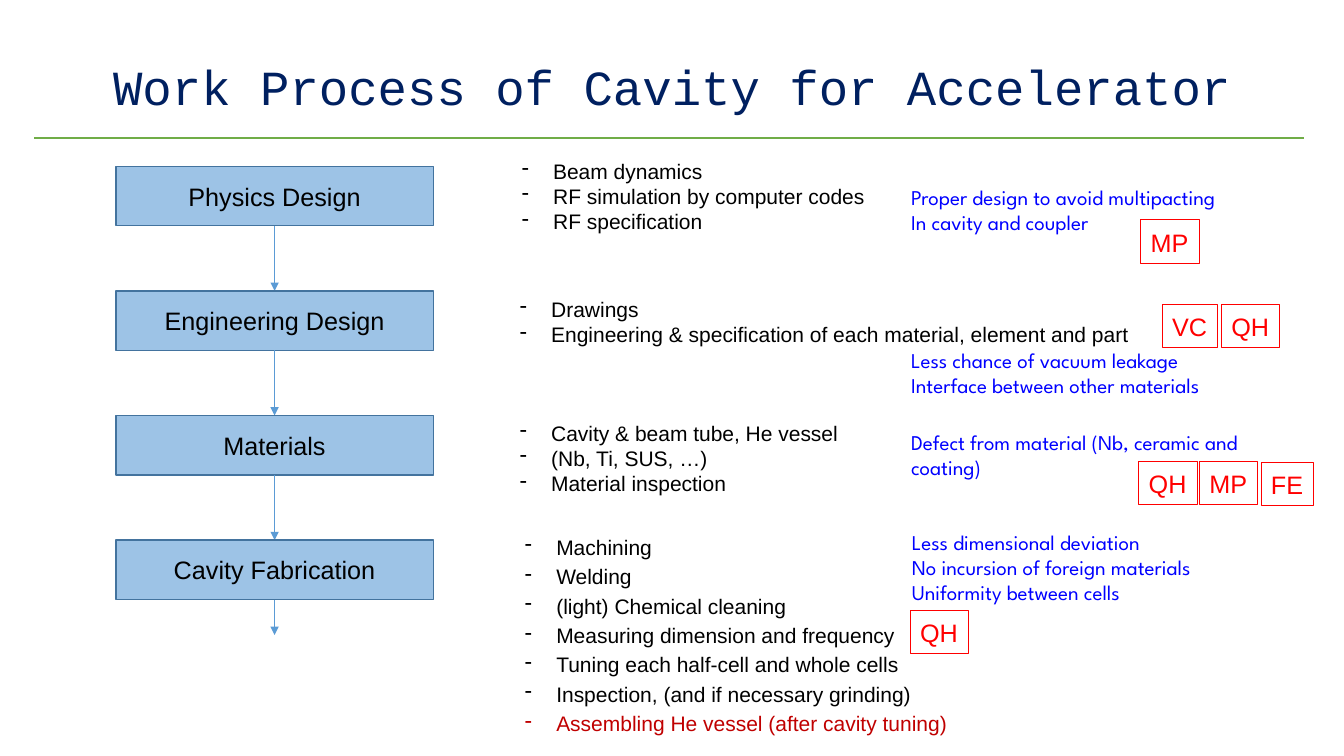
from lxml import etree
from pptx import Presentation
from pptx.dml.color import RGBColor
from pptx.enum.shapes import MSO_CONNECTOR, MSO_SHAPE
from pptx.enum.text import MSO_ANCHOR, MSO_AUTO_SIZE, PP_ALIGN
from pptx.oxml.ns import qn
from pptx.util import Cm, Pt

RECT = MSO_SHAPE.RECTANGLE
STRAIGHT = MSO_CONNECTOR.STRAIGHT
MIDDLE = MSO_ANCHOR.MIDDLE
GROW = MSO_AUTO_SIZE.SHAPE_TO_FIT_TEXT
LEFT, CENTER, JUSTIFY = PP_ALIGN.LEFT, PP_ALIGN.CENTER, PP_ALIGN.JUSTIFY

BLACK = RGBColor(0x00, 0x00, 0x00)
NAVY = RGBColor(0x00, 0x20, 0x60)
GREEN = RGBColor(0x70, 0xAD, 0x47)
STEP_FILL = RGBColor(0x9D, 0xC3, 0xE6)
STEP_LINE = RGBColor(0x43, 0x73, 0x9E)
ARROW_BLUE = RGBColor(0x5B, 0x9B, 0xD5)
NOTE_BLUE = RGBColor(0x00, 0x00, 0xFF)
TAG_RED = RGBColor(0xFF, 0x00, 0x00)
DARK_RED = RGBColor(0xC0, 0x00, 0x00)

STEPS = ["Physics Design", "Engineering Design", "Materials", "Cavity Fabrication"]
STEP_LEFT, STEP_TOP, STEP_WIDTH, STEP_HEIGHT = 2.92, 4.19, 8, 1.5
STEP_PITCH = 3.14
LAST_ARROW = 0.89

TASKS = [
    (12.9, 3.86, 9.25, 2.18, 0,
     ["Beam dynamics", "RF simulation by computer codes", "RF specification"]),
    (12.85, 7.34, 15.9, 1.55, 0,
     ["Drawings", "Engineering & specification of each material, element and part"]),
    (12.85, 10.46, 8.64, 2.18, 0,
     ["Cavity & beam tube, He vessel", "(Nb, Ti, SUS, …)", "Material inspection"]),
    (12.98, 13.34, 11.28, 5.38, 3,
     ["Machining", "Welding", "(light) Chemical cleaning",
      "Measuring dimension and frequency", "Tuning each half-cell and whole cells",
      "Inspection, (and if necessary grinding)",
      "Assembling He vessel (after cavity tuning)"]),
]

NOTES = [
    (22.71, 4.52, 9.8, 1.55, False,
     ["Proper design to avoid multipacting", "In cavity and coupler"]),
    (22.71, 8.64, 9.37, 1.55, False,
     ["Less chance of vacuum leakage", "Interface between other materials"]),
    (22.71, 10.69, 8.99, 1.55, True,
     ["Defect from material (Nb, ceramic and coating)"]),
    (22.73, 13.21, 8.99, 2.18, True,
     ["Less dimensional deviation", "No incursion of foreign materials",
      "Uniformity between cells"]),
]

TAG_WIDTHS = {"MP": 1.47, "QH": 1.47, "VC": 1.4, "FE": 1.32}
TAG_HEIGHT = 1.09
TAGS = [
    ("MP", 28.75, 5.54), ("VC", 29.29, 7.67), ("QH", 30.78, 7.67),
    ("QH", 28.7, 11.63), ("MP", 30.23, 11.63), ("FE", 31.78, 11.66),
    ("QH", 22.94, 15.39),
]


def write(tf, lines, size, font, color, align=LEFT):
    tf.text = "\n".join(lines)
    for p in tf.paragraphs:
        p.alignment = align
        for r in p.runs:
            r.font.size = Pt(size)
            r.font.name = font
            r.font.color.rgb = color


def add_text(s, left, top, width, height, wrap):
    tf = s.shapes.add_textbox(Cm(left), Cm(top), Cm(width), Cm(height)).text_frame
    tf.word_wrap = wrap
    return tf


def add_line(s, x1, y1, x2, y2, color, weight):
    line = s.shapes.add_connector(STRAIGHT, Cm(x1), Cm(y1), Cm(x2), Cm(y2))
    line.line.color.rgb = color
    line.line.width = Pt(weight)
    etree.SubElement(line._element.spPr, qn("a:effectLst"))
    return line


def add_arrow(s, x, top, bottom):
    line = add_line(s, x, top, x, bottom, ARROW_BLUE, 0.5)
    etree.SubElement(line.line._get_or_add_ln(), qn("a:tailEnd"), type="triangle")


def add_rect(s, left, top, width, height, color, weight):
    sp = s.shapes.add_shape(RECT, Cm(left), Cm(top), Cm(width), Cm(height))
    sp.shadow.inherit = False
    sp.line.color.rgb = color
    sp.line.width = Pt(weight)
    return sp


def add_title(s, text):
    tf = add_text(s, 2.34, 1.02, 29.21, 2.46, True)
    tf.vertical_anchor = MIDDLE
    write(tf, [text], 35, "Courier New", NAVY, CENTER)
    tf.paragraphs[0].line_spacing = 0.9


def add_step(s, name, top):
    sp = add_rect(s, STEP_LEFT, top, STEP_WIDTH, STEP_HEIGHT, STEP_LINE, 1)
    sp.fill.solid()
    sp.fill.fore_color.rgb = STEP_FILL
    sp.text_frame.vertical_anchor = MIDDLE
    write(sp.text_frame, [name], 18, "Arial", BLACK, CENTER)


def add_tasks(s, left, top, width, height, space, lines):
    tf = add_text(s, left, top, width, height, False)
    tf.auto_size = GROW
    write(tf, lines, 15, "Arial", BLACK)
    for p in tf.paragraphs:
        p.space_after = Pt(space)
        pPr = p._p.get_or_add_pPr()
        pPr.set("marL", str(Cm(0.79)))
        pPr.set("indent", str(Cm(-0.79)))
        etree.SubElement(pPr, qn("a:buFontTx"))
        etree.SubElement(pPr, qn("a:buChar"), char="-")
    return tf


def add_note(s, left, top, width, height, wrap, lines):
    tf = add_text(s, left, top, width, height, wrap)
    tf.auto_size = GROW
    write(tf, lines, 15, "League Spartan", NOTE_BLUE)


def add_tag(s, code, left, top):
    sp = add_rect(s, left, top, TAG_WIDTHS[code], TAG_HEIGHT, TAG_RED, 0.75)
    sp.fill.background()
    tf = sp.text_frame
    tf.word_wrap = False
    tf.auto_size = GROW
    tf.vertical_anchor = MSO_ANCHOR.TOP
    write(tf, [code], 18, "Arial", TAG_RED, JUSTIFY)
    tf.paragraphs[0].line_spacing = 1.07
    tf.paragraphs[0].space_after = Pt(8)


def main():
    prs = Presentation()
    prs.slide_width, prs.slide_height = Cm(33.87), Cm(19.05)
    s = prs.slides.add_slide(prs.slide_layouts[6])

    add_title(s, "Work Process of Cavity for Accelerator")
    add_line(s, 0.86, 3.48, 32.87, 3.48, GREEN, 1.5)

    for i, name in enumerate(STEPS):
        top = STEP_TOP + i * STEP_PITCH
        bottom = top + STEP_HEIGHT
        end = bottom + LAST_ARROW if name == STEPS[-1] else top + STEP_PITCH
        add_step(s, name, top)
        add_arrow(s, STEP_LEFT + STEP_WIDTH / 2, bottom, end)

    for task in TASKS:
        tf = add_tasks(s, *task)
    tf.paragraphs[-1].runs[0].font.color.rgb = DARK_RED

    for note in NOTES:
        add_note(s, *note)
    for tag in TAGS:
        add_tag(s, *tag)

    prs.save("out.pptx")


if __name__ == "__main__":
    main()
